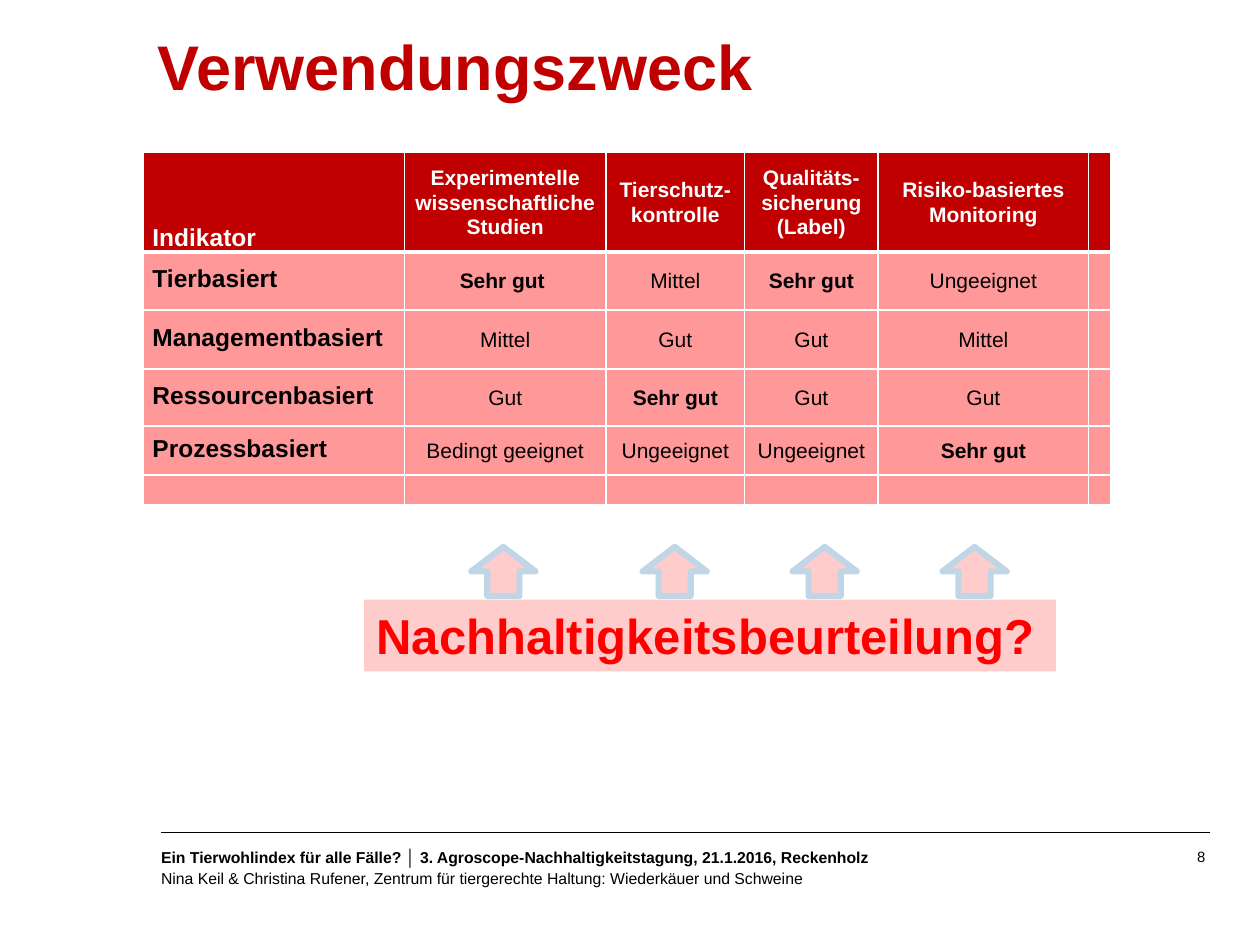
from lxml import etree
from pptx import Presentation
from pptx.dml.color import RGBColor
from pptx.enum.shapes import MSO_CONNECTOR, MSO_SHAPE
from pptx.enum.text import MSO_ANCHOR, PP_ALIGN
from pptx.oxml.ns import qn
from pptx.util import Inches, Pt

LEFT, CENTER, RIGHT, JUSTIFY = PP_ALIGN.LEFT, PP_ALIGN.CENTER, PP_ALIGN.RIGHT, PP_ALIGN.JUSTIFY
TOP, MIDDLE, BOTTOM = MSO_ANCHOR.TOP, MSO_ANCHOR.MIDDLE, MSO_ANCHOR.BOTTOM
RECT, UP_ARROW, STRAIGHT = MSO_SHAPE.RECTANGLE, MSO_SHAPE.UP_ARROW, MSO_CONNECTOR.STRAIGHT

BLACK = RGBColor(0x00, 0x00, 0x00)
WHITE = RGBColor(0xFF, 0xFF, 0xFF)
DARK_RED = RGBColor(0xC0, 0x00, 0x00)
RED = RGBColor(0xFF, 0x00, 0x00)
SALMON = RGBColor(0xFF, 0x99, 0x99)
PINK = RGBColor(0xFF, 0xCC, 0xCC)
LIGHT_BLUE = RGBColor(0xC0, 0xD6, 0xE6)


def write(p, text, size, color, bold=False, align=LEFT, spacing=None):
    p.text = text
    p.alignment = align
    p.line_spacing = spacing
    p.font.name = "Arial"
    p.font.size = Pt(size)
    p.font.bold = bold
    p.font.color.rgb = color


def add_text_frame(s, x, y, w, h, inset=0):
    tf = s.shapes.add_textbox(Inches(x), Inches(y), Inches(w), Inches(h)).text_frame
    tf.word_wrap = True
    tf.vertical_anchor = TOP
    tf.margin_left = tf.margin_right = Inches(inset)
    tf.margin_top = tf.margin_bottom = Inches(inset / 2)
    return tf


prs = Presentation()
prs.slide_width, prs.slide_height = Inches(10), Inches(7.5)
s = prs.slides.add_slide(prs.slide_layouts[6])

# Footer: rule, page number, event and authors
rule = s.shapes.add_connector(STRAIGHT, Inches(1.28), Inches(6.61), Inches(9.6), Inches(6.61))
rule.line.color.rgb = BLACK
rule.line.width = Pt(0.75)
etree.SubElement(rule._element.spPr, qn("a:effectLst"))

tf = add_text_frame(s, 7.12, 6.72, 2.48, 0.14)
write(tf.paragraphs[0], "8 ", 8.5, BLACK, align=RIGHT, spacing=1.05)

tf = add_text_frame(s, 1.18, 6.66, 6.78, 0.44, inset=0.1)
write(tf.paragraphs[0], "Ein Tierwohlindex für alle Fälle? │ 3. Agroscope-Nachhaltigkeitstagung, "
      "21.1.2016, Reckenholz", 9, BLACK, bold=True, spacing=Pt(12))
write(tf.add_paragraph(), "Nina Keil & Christina Rufener, Zentrum für tiergerechte Haltung: "
      "Wiederkäuer und Schweine", 9, BLACK, spacing=Pt(12))

# Title
tf = add_text_frame(s, 1.25, 0.29, 8.72, 1.08)
write(tf.paragraphs[0], "Verwendungszweck", 36, DARK_RED, bold=True, spacing=0.9)

# Suitability table; the last row and column are empty
rows = [
    ["Indikator", "Experimentelle wissenschaftliche Studien", "Tierschutz-kontrolle",
     "Qualitäts-sicherung (Label)", "Risiko-basiertes Monitoring", ""],
    ["Tierbasiert", "Sehr gut ", "Mittel", "Sehr gut", "Ungeeignet", ""],
    ["Managementbasiert", "Mittel", "Gut", "Gut", "Mittel", ""],
    ["Ressourcenbasiert", "Gut", "Sehr gut", "Gut", "Gut", ""],
    ["Prozessbasiert", "Bedingt geeignet", "Ungeeignet", "Ungeeignet", "Sehr gut", ""],
    [""] * 6,
]
col_widths = [2.07, 1.6, 1.1, 1.06, 1.67, 0.18]
row_heights = [0.79, 0.46, 0.47, 0.45, 0.39, 0.23]

table = s.shapes.add_table(len(rows), len(col_widths), Inches(1.14), Inches(1.21),
                           Inches(sum(col_widths)), Inches(sum(row_heights))).table
for col, width in zip(table.columns, col_widths):
    col.width = Inches(width)
for row, height in zip(table.rows, row_heights):
    row.height = Inches(height)

for i, texts in enumerate(rows):
    for j, text in enumerate(texts):
        header, label = i == 0, j == 0
        cell = table.cell(i, j)
        cell.margin_left = cell.margin_right = Inches(0.07)
        cell.margin_top = cell.margin_bottom = 0
        cell.vertical_anchor = BOTTOM if header and label else MIDDLE
        write(cell.text_frame.paragraphs[0], text, 14 if label else 12,
              WHITE if header else BLACK,
              bold=header or label or text.startswith("Sehr gut"),
              align=JUSTIFY if label else CENTER, spacing=Pt(14))
        # White borders, thick between header and body; they precede the fill
        tc_pr = cell._tc.get_or_add_tcPr()
        for side in ("L", "R", "T", "B"):
            thick = (i, side) in ((0, "B"), (1, "T"))
            ln = etree.SubElement(tc_pr, qn(f"a:ln{side}"), w=str(Pt(3 if thick else 1)))
            fill = etree.SubElement(ln, qn("a:solidFill"))
            etree.SubElement(fill, qn("a:srgbClr"), val=str(WHITE))
        cell.fill.solid()
        cell.fill.fore_color.rgb = DARK_RED if header else SALMON

# Question banner
banner = s.shapes.add_shape(RECT, Inches(2.89), Inches(4.76), Inches(5.49), Inches(0.57))
banner.shadow.inherit = False
banner.fill.solid()
banner.fill.fore_color.rgb = PINK
banner.line.fill.background()
tf = banner.text_frame
tf.word_wrap = True
tf.vertical_anchor = TOP
write(tf.paragraphs[0], "Nachhaltigkeitsbeurteilung?", 28, RED, bold=True)

# Arrows from the banner to the four purposes
for x in (3.74, 5.1, 6.29, 7.48):
    arrow = s.shapes.add_shape(UP_ARROW, Inches(x), Inches(4.34), Inches(0.51), Inches(0.39))
    arrow.shadow.inherit = False
    arrow.fill.solid()
    arrow.fill.fore_color.rgb = PINK
    arrow.line.color.rgb = LIGHT_BLUE
    arrow.line.width = Pt(3.5)
    etree.SubElement(arrow.line._get_or_add_ln(), qn("a:round"))

prs.save("out.pptx")
